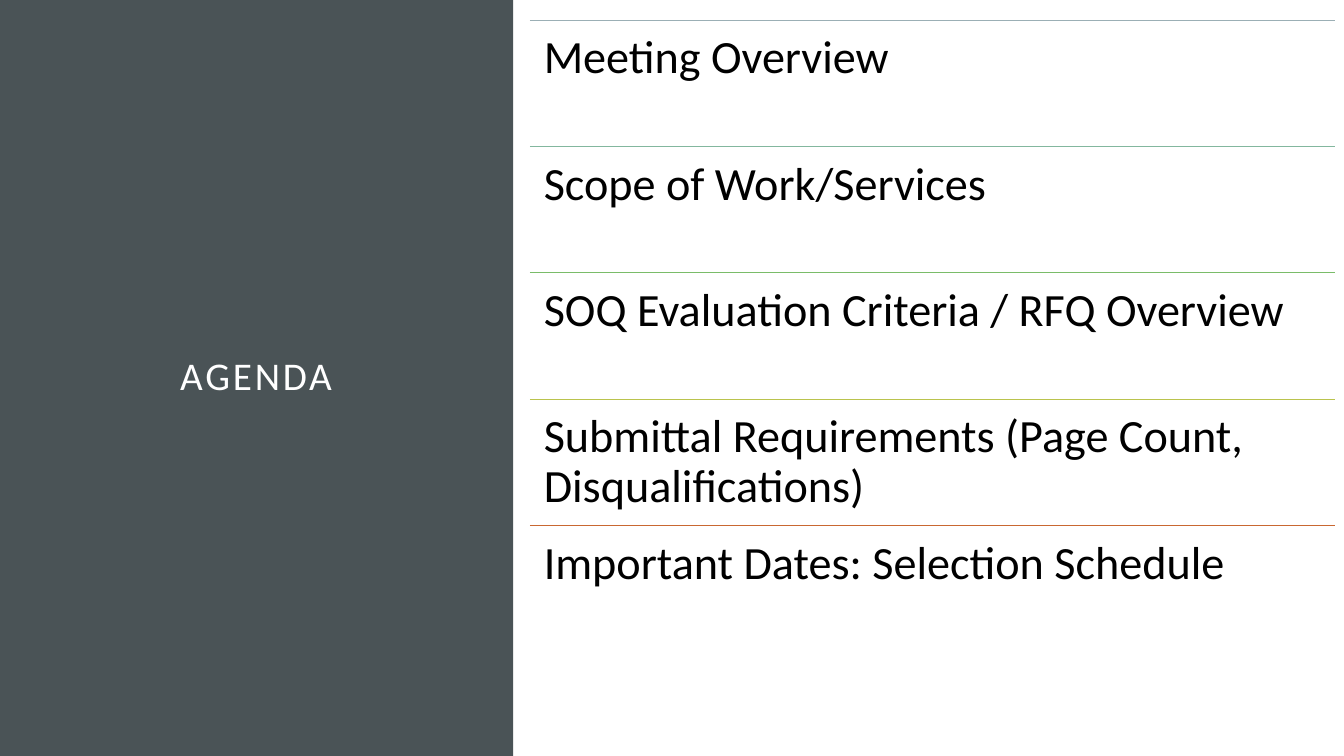
from lxml.etree import SubElement
from pptx import Presentation
from pptx.dml.color import RGBColor
from pptx.enum.shapes import MSO_CONNECTOR, MSO_SHAPE
from pptx.enum.text import MSO_ANCHOR, PP_ALIGN
from pptx.oxml.ns import qn
from pptx.util import Pt

COLORS = {
    "panel": "4A5356",
    "title": "FFFFFF",
    "text": "000000",
    "gray": "9BAFB5",
    "teal": "83B79E",
    "green": "7ABC69",
    "olive": "BAC34D",
    "rust": "C96731",
}
AGENDA = [
    ("Meeting Overview", "gray"),
    ("Scope of Work/Services", "teal"),
    ("SOQ Evaluation Criteria / RFQ Overview", "green"),
    ("Submittal Requirements (Page Count, Disqualifications)", "olive"),
    ("Important Dates: Selection Schedule", "rust"),
]
LIST_LEFT, LIST_TOP, LIST_WIDTH, ROW_HEIGHT = 378.5, 14.4, 575, 90.2


def color(name):
    return RGBColor.from_string(COLORS[name])


def add_text(left, top, width, height, text, size, color_name, inset):
    """Add a wrapped one-paragraph text box and return its text frame."""
    frame = slide.shapes.add_textbox(Pt(left), Pt(top), Pt(width), Pt(height)).text_frame
    frame.word_wrap = True
    frame.margin_left = frame.margin_right = Pt(inset)
    frame.margin_top = frame.margin_bottom = Pt(inset)
    paragraph = frame.paragraphs[0]
    paragraph.text = text
    paragraph.line_spacing = 0.9
    paragraph.font.name = "Calibri"
    paragraph.font.size = Pt(size)
    paragraph.font.color.rgb = color(color_name)
    return frame


presentation = Presentation()
presentation.slide_width = Pt(960)
presentation.slide_height = Pt(540)
slide = presentation.slides.add_slide(presentation.slide_layouts[6])

panel = slide.shapes.add_shape(MSO_SHAPE.RECTANGLE, Pt(0), Pt(0), Pt(366.5), Pt(540))
panel.shadow.inherit = False
panel.fill.solid()
panel.fill.fore_color.rgb = color("panel")
panel.line.fill.background()

title = add_text(50.4, 211, 265, 118, "AGENDA", 28, "title", 14.4)
title.vertical_anchor = MSO_ANCHOR.MIDDLE
title_paragraph = title.paragraphs[0]
title_paragraph.alignment = PP_ALIGN.CENTER
title_paragraph.runs[0].font._element.set("spc", "200")

for row, (topic, line_color) in enumerate(AGENDA):
    top = LIST_TOP + row * ROW_HEIGHT
    divider = slide.shapes.add_connector(
        MSO_CONNECTOR.STRAIGHT, Pt(LIST_LEFT), Pt(top), Pt(LIST_LEFT + LIST_WIDTH), Pt(top)
    )
    divider.line.color.rgb = color(line_color)
    divider.line.width = Pt(0.5)
    SubElement(divider._element.spPr, qn("a:effectLst"))
    add_text(LIST_LEFT, top, LIST_WIDTH, ROW_HEIGHT, topic, 33, "text", 9.9)

presentation.save("out.pptx")
